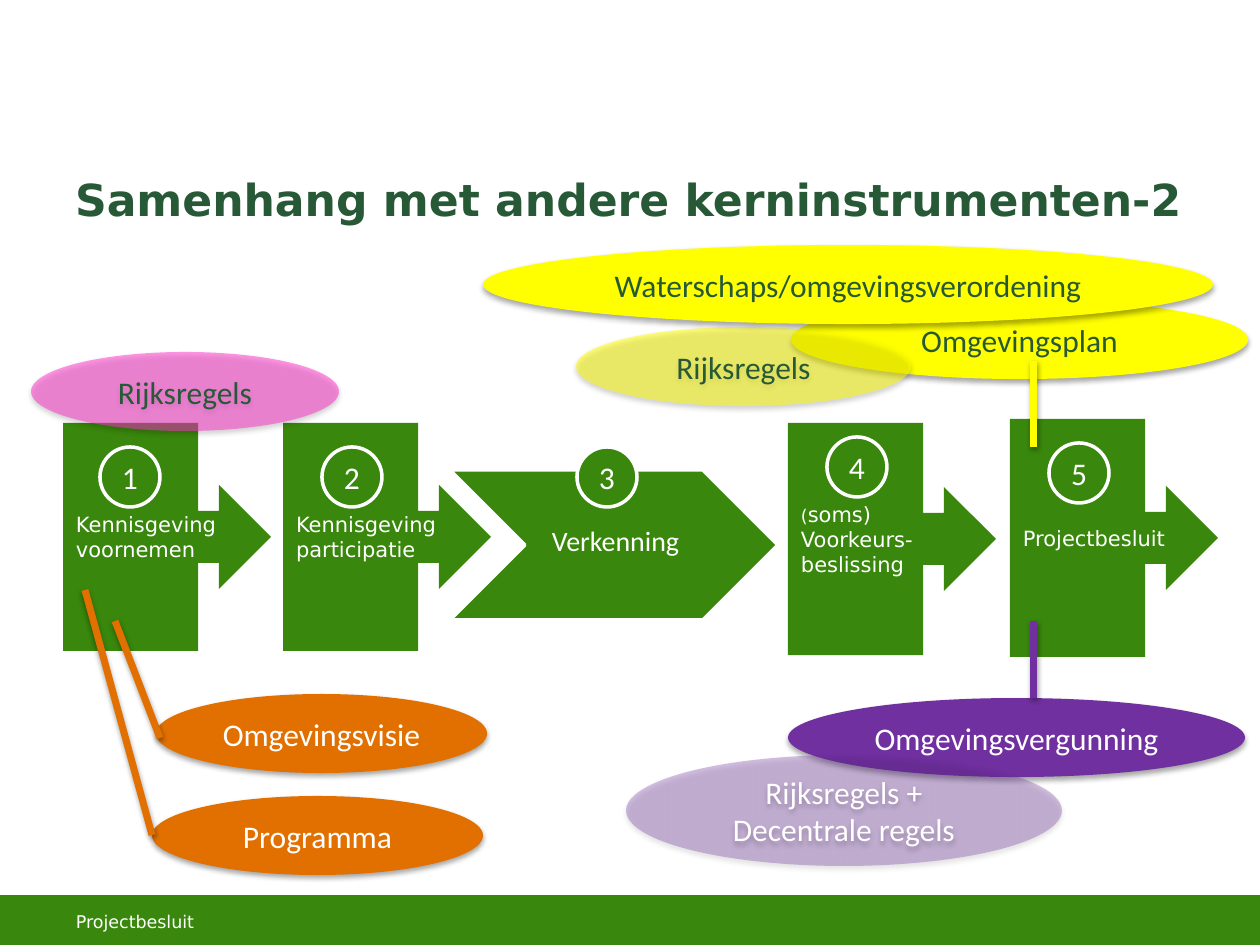
import pptx
import pptx.util
import pptx.dml.color
import pptx.enum.shapes
import pptx.enum.text
import pptx.oxml
import pptx.oxml.ns

HUES = {
    "green": "39870C", "dark": "275937", "white": "FFFFFF",
    "orange": "E17000", "purple": "7030A0", "yellow": "FFFF00",
    "pink": "FF33CC",
}
SCALE = 914400 / 126
KIND = pptx.enum.shapes.MSO_SHAPE
ANCHOR = pptx.enum.text.MSO_ANCHOR
ALIGN = pptx.enum.text.PP_ALIGN
SANS, BODY = "DejaVu Sans", "Calibri"


def px(n):
    return pptx.util.Emu(round(n * SCALE))


def hue(name):
    return pptx.dml.color.RGBColor.from_string(HUES[name])


class Deck:
    """Holds the current slide and the house style."""

    def __init__(self):
        self.file = pptx.Presentation()
        self.file.slide_width, self.file.slide_height = px(1260), px(945)
        self.slide = self.file.slides.add_slide(self.file.slide_layouts[5])

    def label(self, shape, lines, size, font, color, align=ALIGN.CENTER,
              bold=False, pad=(13, 6, 13, 6), wrap=True, anchor=ANCHOR.MIDDLE):
        """Each line is a string, or a list of (string, size) runs."""
        frame = shape.text_frame
        frame.word_wrap, frame.vertical_anchor = wrap, anchor
        frame.margin_left, frame.margin_top = px(pad[0]), px(pad[1])
        frame.margin_right, frame.margin_bottom = px(pad[2]), px(pad[3])
        for i, line in enumerate(lines):
            para = frame.add_paragraph() if i else frame.paragraphs[0]
            para.alignment = align
            for text, points in [(line, size)] if isinstance(line, str) else line:
                run = para.add_run()
                run.text = text
                run.font.size, run.font.name = pptx.util.Pt(points), font
                run.font.bold, run.font.color.rgb = bold, hue(color)

    def shade(self, props, alpha, dist):
        """Put a soft shadow below the item with these shape properties."""
        effects = props.find(pptx.oxml.ns.qn("a:effectLst"))
        if effects is None:
            effects = pptx.oxml.parse_xml(
                f'<a:effectLst {pptx.oxml.ns.nsdecls("a")}/>')
            props.append(effects)
        effects.append(pptx.oxml.parse_xml(
            f'<a:outerShdw {pptx.oxml.ns.nsdecls("a")} blurRad="40000" '
            f'dist="{dist}" dir="5400000" rotWithShape="0">'
            f'<a:srgbClr val="000000"><a:alpha val="{alpha}000"/>'
            '</a:srgbClr></a:outerShdw>'))

    def shape(self, kind, box, fill="green", edge=None, alpha=None):
        item = self.slide.shapes.add_shape(kind, *map(px, box))
        item.shadow.inherit = False
        item.fill.solid()
        item.fill.fore_color.rgb = hue(fill)
        if alpha:
            tint = item.element.spPr.xpath("a:solidFill/a:srgbClr")[0]
            tint.append(pptx.oxml.parse_xml(
                f'<a:alpha {pptx.oxml.ns.nsdecls("a")} val="{alpha}000"/>'))
        if edge:
            item.line.color.rgb = hue(edge)
            item.line.width = pptx.util.Pt(2)
        else:
            item.line.fill.background()
        return item

    def title(self, text):
        item = self.slide.shapes.title
        item.left, item.top, item.width, item.height = map(px, (62, 161, 1134, 92))
        self.label(item, [text], 25.2, SANS, "dark", ALIGN.LEFT, True,
                   (13, 11, 0, 0), anchor=ANCHOR.TOP)

    def step(self, box, lines):
        item = self.shape(KIND.RIGHT_ARROW_CALLOUT, box)
        self.label(item, lines, 12, SANS, "white", ALIGN.LEFT, wrap=False)

    def badge(self, x, y, text):
        item = self.shape(KIND.OVAL, (x, y, 60, 60), edge="white")
        self.label(item, [text], 18, BODY, "white", pad=(0, 0, 0, 0))

    def oval(self, box, lines, fill, color="white", alpha=None):
        item = self.shape(KIND.OVAL, box, fill, alpha=alpha)
        self.shade(item.element.spPr, 35, 23000)
        self.label(item, lines, 18, BODY, color)

    def line(self, ends, color):
        item = self.slide.shapes.add_connector(
            pptx.enum.shapes.MSO_CONNECTOR.STRAIGHT, *map(px, ends))
        item.line.color.rgb = hue(color)
        item.line.width = pptx.util.Pt(4)
        self.shade(item.element.spPr, 38, 20000)

    def note(self, box, text):
        item = self.slide.shapes.add_textbox(*map(px, box))
        self.label(item, [text], 10, SANS, "white", ALIGN.LEFT)


def main():
    deck = Deck()
    deck.shape(KIND.RECTANGLE, (0, 897, 1260, 49), edge="green")
    deck.title("Samenhang met andere kerninstrumenten-2")

    for box, lines in [
        ((63, 423, 208, 228), ["Kennisgeving", "voornemen"]),
        ((283, 423, 208, 228), ["Kennisgeving", "participatie"]),
        ((788, 423, 208, 232),
         [[("(", 10), ("soms)", 12)], "Voorkeurs-", "beslissing"]),
        ((1010, 419, 208, 238), ["Projectbesluit"]),
    ]:
        deck.step(box, lines)

    deck.shape(KIND.CHEVRON, (450, 470, 328, 150), edge="white")
    panel = deck.shape(KIND.RECTANGLE, (527, 478, 171, 128))
    deck.label(panel, ["Verkenning"], 16, BODY, "white", pad=(10, 4, 4, 4))
    panel.text_frame.paragraphs[0].line_spacing = 0.9

    spots = [(100, 447), (322, 447), (577, 447), (827, 437), (1049, 443)]
    for i, (x, y) in enumerate(spots, 1):
        deck.badge(x, y, str(i))

    deck.oval((156, 694, 331, 79), ["Omgevingsvisie"], "orange")
    deck.oval((152, 796, 331, 79), ["Programma"], "orange")
    deck.oval((788, 698, 457, 79), ["Omgevingsvergunning"], "purple")
    deck.oval((791, 300, 457, 79), ["Omgevingsplan"], "yellow", "dark")

    deck.line((115, 621, 160, 738), "orange")
    deck.line((85, 590, 152, 835), "orange")
    deck.line((1034, 361, 1034, 447), "yellow")
    deck.line((1034, 621, 1034, 698), "purple")

    deck.oval((626, 755, 436, 111), ["Rijksregels +", "Decentrale regels"],
              "purple", alpha=31)
    deck.oval((576, 327, 335, 79), ["Rijksregels"], "yellow", "dark", 51)
    deck.oval((483, 245, 730, 79), ["Waterschaps/omgevingsverordening"],
              "yellow", "dark")
    deck.oval((31, 352, 308, 79), ["Rijksregels"], "pink", "dark", 51)

    deck.note((63, 897, 400, 50), "Projectbesluit")
    deck.file.save("out.pptx")


if __name__ == "__main__":
    main()
